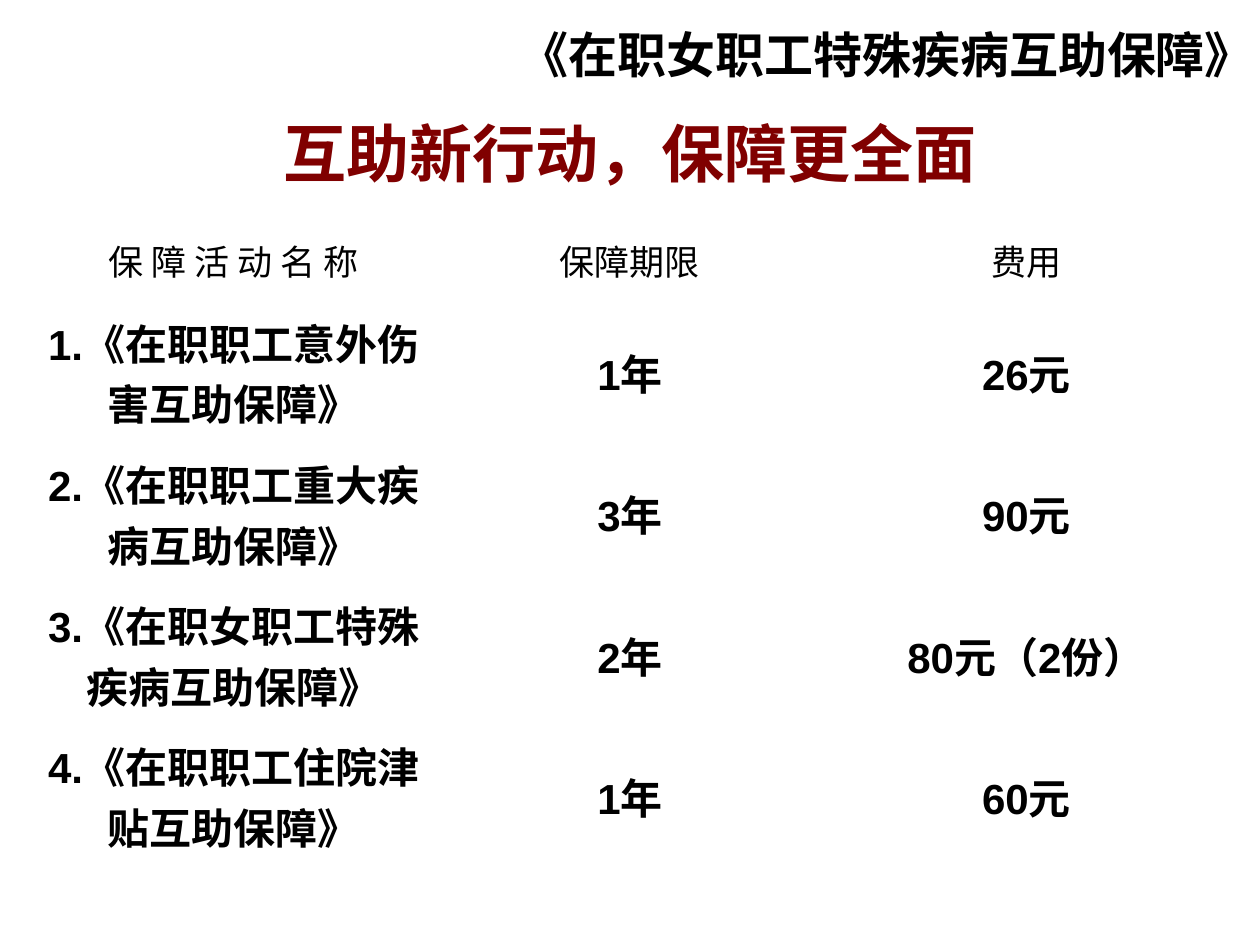
import pptx
import pptx.dml.color
import pptx.enum.text
import pptx.oxml
import pptx.oxml.ns
import pptx.util
from lxml import etree

Pt = pptx.util.Pt
ALIGN = pptx.enum.text.PP_ALIGN
MIDDLE = pptx.enum.text.MSO_ANCHOR.MIDDLE

TITLE = "互助新行动，保障更全面"
PLAN_NAME = "《在职女职工特殊疾病互助保障》"
HEADER = ("保 障 活 动 名 称", "保障期限", "费用")
PLANS = [
    ("1.《在职职工意外伤害互助保障》", "1年", "26元"),
    ("2.《在职职工重大疾病互助保障》", "3年", "90元"),
    ("3.《在职女职工特殊疾病互助保障》", "2年", "80元（2份）"),
    ("4.《在职职工住院津贴互助保障》", "1年", "60元"),
]

THEME = {
    "latin": "Arial", "chinese": "Noto Sans CJK SC",
    "text": "000000", "title": "800000", "paper": "FFFFFF",
    "title_size": 36, "plan_size": 28, "header_size": 20, "body_size": 24,
}

TITLE_AREA = (51.84, 54.72, 616.32, 56.16)
PLAN_AREA = (251.28, 4.32, 472.32, 46.8)
TABLE_AREA = (20.16, 124.56, 679.68, 370.8)
HEADER_HEIGHT = 47.8


def colour(name):
    return pptx.dml.color.RGBColor.from_string(THEME[name])


def write(frame, text, size, align=ALIGN.CENTER, bold=True,
          ink="text", latin="latin", spacing=None):
    frame.text = text
    para = frame.paragraphs[0]
    para.alignment = align
    if spacing:
        para.line_spacing = spacing
    span = para.runs[0]
    span.font.size = Pt(THEME[size])
    span.font.bold = bold
    span.font.name = THEME[latin]
    span.font.color.rgb = colour(ink)
    east_asian = pptx.oxml.parse_xml(
        f'<a:ea {pptx.oxml.ns.nsdecls("a")} typeface="{THEME["chinese"]}"/>')
    span.font._element.find(pptx.oxml.ns.qn("a:latin")).addnext(east_asian)


def set_borders(cell, bottom):
    properties = cell._tc.get_or_add_tcPr()
    for side, width in (("L", 1), ("R", 1), ("T", 1), ("B", bottom)):
        line = etree.SubElement(properties, pptx.oxml.ns.qn(f"a:ln{side}"),
                                w=str(int(Pt(width))))
        fill = etree.SubElement(line, pptx.oxml.ns.qn("a:solidFill"))
        etree.SubElement(fill, pptx.oxml.ns.qn("a:srgbClr"), val=THEME["paper"])


def add_title(page):
    title = page.shapes.title
    title.left, title.top, title.width, title.height = map(Pt, TITLE_AREA)
    title.text_frame.vertical_anchor = MIDDLE
    write(title.text_frame, TITLE, "title_size", ink="title",
          latin="chinese", spacing=1.2)


def add_plan_table(page):
    rows = [HEADER] + PLANS
    table = page.shapes.add_table(
        len(rows), len(HEADER), *map(Pt, TABLE_AREA)).table
    table.first_row = table.horz_banding = False
    for column in table.columns:
        column.width = Pt(TABLE_AREA[2] / len(HEADER))
    body_height = (TABLE_AREA[3] - HEADER_HEIGHT) / len(PLANS)
    for r, texts in enumerate(rows):
        is_header = r == 0
        table.rows[r].height = Pt(HEADER_HEIGHT if is_header else body_height)
        for c, text in enumerate(texts):
            cell = table.cell(r, c)
            cell.vertical_anchor = MIDDLE
            set_borders(cell, bottom=3 if is_header else 1)
            cell.fill.solid()
            cell.fill.fore_color.rgb = colour("paper")
            write(cell.text_frame, text,
                  "header_size" if is_header else "body_size",
                  bold=not is_header)


def add_plan_name(page):
    box = page.shapes.add_textbox(*map(Pt, PLAN_AREA))
    box.text_frame.word_wrap = True
    box.text_frame.vertical_anchor = MIDDLE
    write(box.text_frame, PLAN_NAME, "plan_size", align=ALIGN.RIGHT, spacing=1.2)


def main():
    deck = pptx.Presentation()
    deck.slide_width, deck.slide_height = Pt(720), Pt(540)
    page = deck.slides.add_slide(deck.slide_layouts.get_by_name("Title Only"))
    add_title(page)
    add_plan_table(page)
    add_plan_name(page)
    deck.save("out.pptx")


if __name__ == "__main__":
    main()
